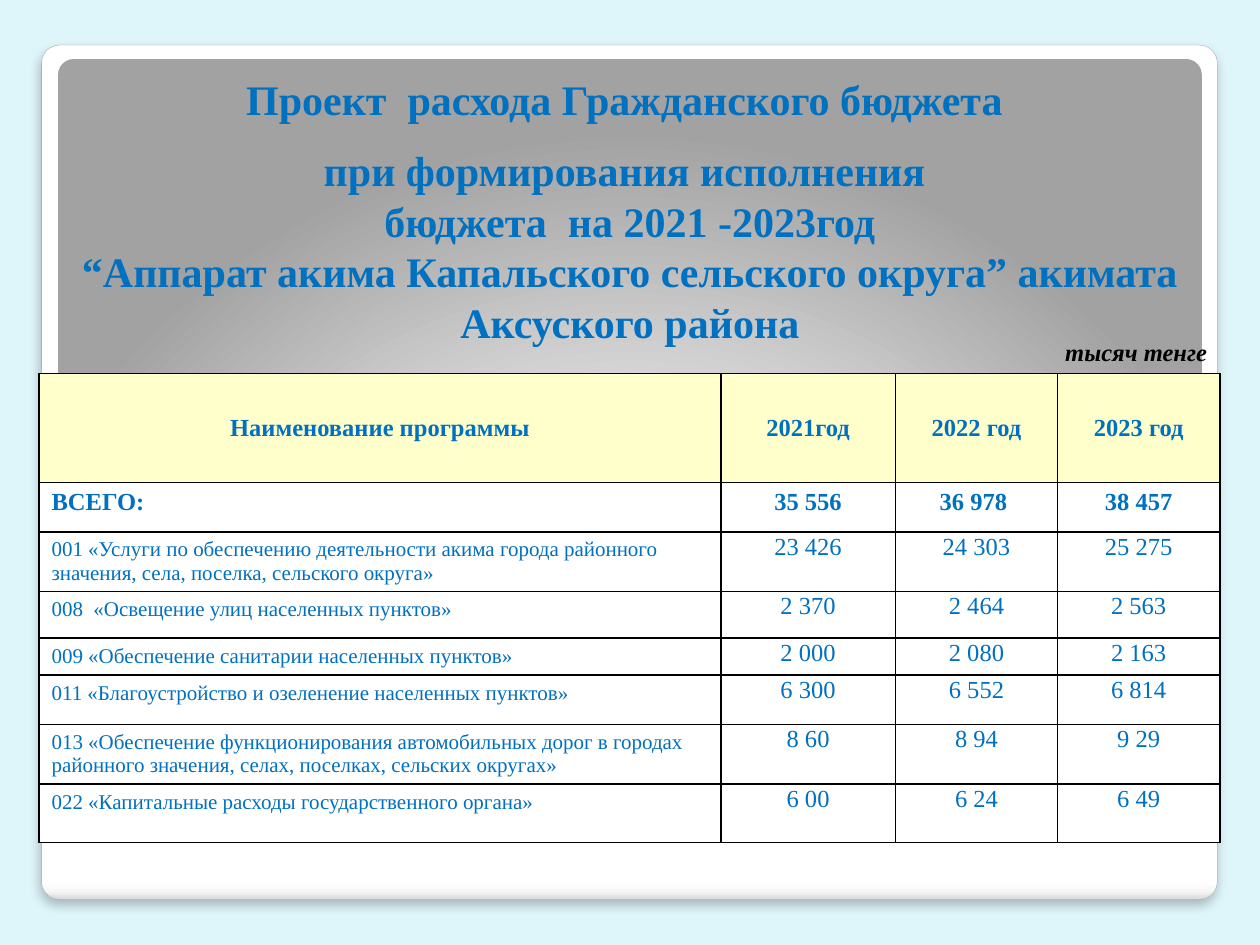
from dataclasses import dataclass

from lxml.etree import SubElement
from pptx import Presentation
from pptx.dml.color import RGBColor
from pptx.enum.shapes import MSO_SHAPE as Shape
from pptx.enum.text import MSO_ANCHOR as Anchor, PP_ALIGN as Align
from pptx.oxml import parse_xml
from pptx.oxml.ns import nsdecls, qn
from pptx.util import Cm, Pt

PALE_BLUE = RGBColor(0xDE, 0xF5, 0xFA)
BLUE = RGBColor(0x00, 0x70, 0xC0)
CREAM = RGBColor(0xFF, 0xFF, 0xCC)
WHITE = RGBColor(0xFF, 0xFF, 0xFF)
BLACK = RGBColor(0x00, 0x00, 0x00)
GREY = RGBColor(0xA4, 0xA4, 0xA4)
FONT = "Times New Roman"

DOWNWARD = '<a:lin ang="5400000" scaled="0"/>'
FROM_BELOW = ('<a:path path="circle"><a:fillToRect l="50000" t="175000" '
              'r="50000" b="-75000"/></a:path>')


@dataclass
class Panel:
    left: float
    top: float
    width: float
    height: float
    stops: list[tuple[int, str]]
    direction: str
    raised: bool = False


@dataclass
class Style:
    size: int = 14
    bold: bool = False
    italic: bool = False
    color: RGBColor = BLUE
    align: Align = Align.CENTER


@dataclass
class Program:
    name: str
    amounts: tuple[str, str, str]
    height: float


PANELS = [
    Panel(0.84, 0.91, 23.7, 17.22,
          [(0, "FFFFFF"), (98, "FFFFFF"), (99, "F7F7F7"), (100, "DADADA")], DOWNWARD, True),
    Panel(1.17, 1.19, 23.06, 15.24,
          [(0, "FFFFFF"), (55, "E1E1E1"), (100, "A2A2A2")], FROM_BELOW),
]
TITLE = [
    "Проект  расхода Гражданского бюджета ",
    "при формирования исполнения \vбюджета  на 2021 -2023год\v"
    "“Аппарат акима Капальского сельского округа” акимата Аксуского района",
]
HEADINGS = ["Наименование программы", "2021год", "2022 год", "2023 год"]
TOTALS = ["ВСЕГО:", "35 556", "36 978 ", "38 457"]
PROGRAMS = [
    Program("001 «Услуги по обеспечению деятельности акима города районного значения, "
            "села, поселка, сельского округа»", ("23 426", "24 303", "25 275"), 1.19),
    Program("008  «Освещение улиц населенных пунктов»", ("2 370", "2 464", "2 563"), 0.94),
    Program("009 «Обеспечение санитарии населенных пунктов»",
            ("2 000", "2 080", "2 163"), 0.75),
    Program("011 «Благоустройство и озеленение населенных пунктов»",
            ("6 300", "6 552", "6 814"), 0.99),
    Program("013 «Обеспечение функционирования автомобильных дорог в городах районного "
            "значения, селах, поселках, сельских округах»", ("8 60", "8 94", "9 29"), 1.19),
    Program("022 «Капитальные расходы государственного органа»",
            ("6 00", "6 24", "6 49"), 1.18),
]
COLUMNS = [13.74, 3.52, 3.27, 3.27]
ROWS = [1.33, 2.2, 0.99] + [program.height for program in PROGRAMS]


def draw_panel(page, panel: Panel) -> None:
    box = page.shapes.add_shape(Shape.ROUNDED_RECTANGLE, Cm(panel.left), Cm(panel.top),
                                Cm(panel.width), Cm(panel.height))
    box.adjustments[0] = 0.021
    box.shadow.inherit = False
    stops = "".join(f'<a:gs pos="{place * 1000}"><a:srgbClr val="{color}"/></a:gs>'
                    for place, color in panel.stops)
    properties = box._element.spPr
    properties.find(qn("a:prstGeom")).addnext(parse_xml(
        f'<a:gradFill {nsdecls("a")} rotWithShape="1"><a:gsLst>{stops}</a:gsLst>'
        f'{panel.direction}</a:gradFill>'))
    if not panel.raised:
        box.line.fill.background()
        return
    box.line.color.rgb = GREY
    box.line.width = Pt(0.16)
    shadow = SubElement(properties.find(qn("a:effectLst")), qn("a:outerShdw"),
                        blurRad=str(Pt(6)), dist=str(Pt(4)), dir="5400000",
                        algn="t", rotWithShape="0")
    color = SubElement(shadow, qn("a:srgbClr"), val="000000")
    SubElement(color, qn("a:alpha"), val="25000")


def style_paragraph(para, style: Style) -> None:
    para.alignment = style.align
    font = para.font
    font.name, font.size = FONT, Pt(style.size)
    font.bold, font.italic = style.bold, style.italic
    font.color.rgb = style.color


def draw_title(page) -> None:
    box = page.shapes.add_textbox(Cm(1.19), Cm(1.32), Cm(23.01), Cm(5.79))
    frame = box.text_frame
    frame.word_wrap = True
    frame.vertical_anchor = Anchor.BOTTOM
    for index, text in enumerate(TITLE):
        para = frame.add_paragraph() if index else frame.paragraphs[0]
        para.text = text
        style_paragraph(para, Style(size=24, bold=True))
        para.space_before = Pt(12)


def set_borders(cell, sides: str) -> None:
    """Rule the named sides (of LRTB) in black and clear the others."""
    properties = cell._tc.get_or_add_tcPr()
    for index, side in enumerate("LRTB"):
        paint = ('<a:solidFill><a:srgbClr val="000000"/></a:solidFill>'
                 if side in sides else "<a:noFill/>")
        properties.insert(index, parse_xml(
            f'<a:ln{side} {nsdecls("a")} w="{Pt(1)}">{paint}</a:ln{side}>'))


def fill_cell(cell, text: str, style: Style, fill: RGBColor,
              anchor: Anchor = Anchor.TOP, tight: bool = False) -> None:
    cell.text = text
    style_paragraph(cell.text_frame.paragraphs[0], style)
    cell.vertical_anchor = anchor
    cell.margin_left = cell.margin_right = Cm(0.03 if tight else 0.25)
    cell.margin_top = Cm(0.03 if tight else 0.13)
    cell.margin_bottom = Cm(0 if tight else 0.13)
    cell.fill.solid()
    cell.fill.fore_color.rgb = fill
    set_borders(cell, "LRTB")


def draw_unit_row(table) -> None:
    for column in range(len(COLUMNS)):
        cell = table.cell(0, column)
        cell.fill.background()
        set_borders(cell, "B")
    unit = table.cell(0, 2)
    unit.merge(table.cell(0, 3))
    unit.text = "тысяч тенге"
    unit.vertical_anchor = Anchor.BOTTOM
    style_paragraph(unit.text_frame.paragraphs[0],
                    Style(bold=True, italic=True, color=BLACK, align=Align.RIGHT))


def draw_budget(page) -> None:
    table = page.shapes.add_table(len(ROWS), len(COLUMNS), Cm(0.79), Cm(6.2),
                                  Cm(sum(COLUMNS)), Cm(sum(ROWS))).table
    table.first_row = table.horz_banding = False
    for column, width in zip(table.columns, COLUMNS):
        column.width = Cm(width)
    for row, height in zip(table.rows, ROWS):
        row.height = Cm(height)
    draw_unit_row(table)
    for column, (heading, total) in enumerate(zip(HEADINGS, TOTALS)):
        fill_cell(table.cell(1, column), heading, Style(bold=True), CREAM, Anchor.MIDDLE)
        align = Align.CENTER if column else Align.LEFT
        fill_cell(table.cell(2, column), total, Style(bold=True, align=align), WHITE)
    for row, program in enumerate(PROGRAMS, start=3):
        fill_cell(table.cell(row, 0), program.name, Style(size=12, align=Align.LEFT), WHITE)
        for column, amount in enumerate(program.amounts, start=1):
            fill_cell(table.cell(row, column), amount, Style(), WHITE, tight=True)


def main() -> None:
    deck = Presentation()
    deck.slide_width, deck.slide_height = Cm(25.4), Cm(19.05)
    page = deck.slides.add_slide(deck.slide_layouts[6])
    page.background.fill.solid()
    page.background.fill.fore_color.rgb = PALE_BLUE
    for panel in PANELS:
        draw_panel(page, panel)
    draw_budget(page)
    draw_title(page)
    deck.save("out.pptx")


if __name__ == "__main__":
    main()
